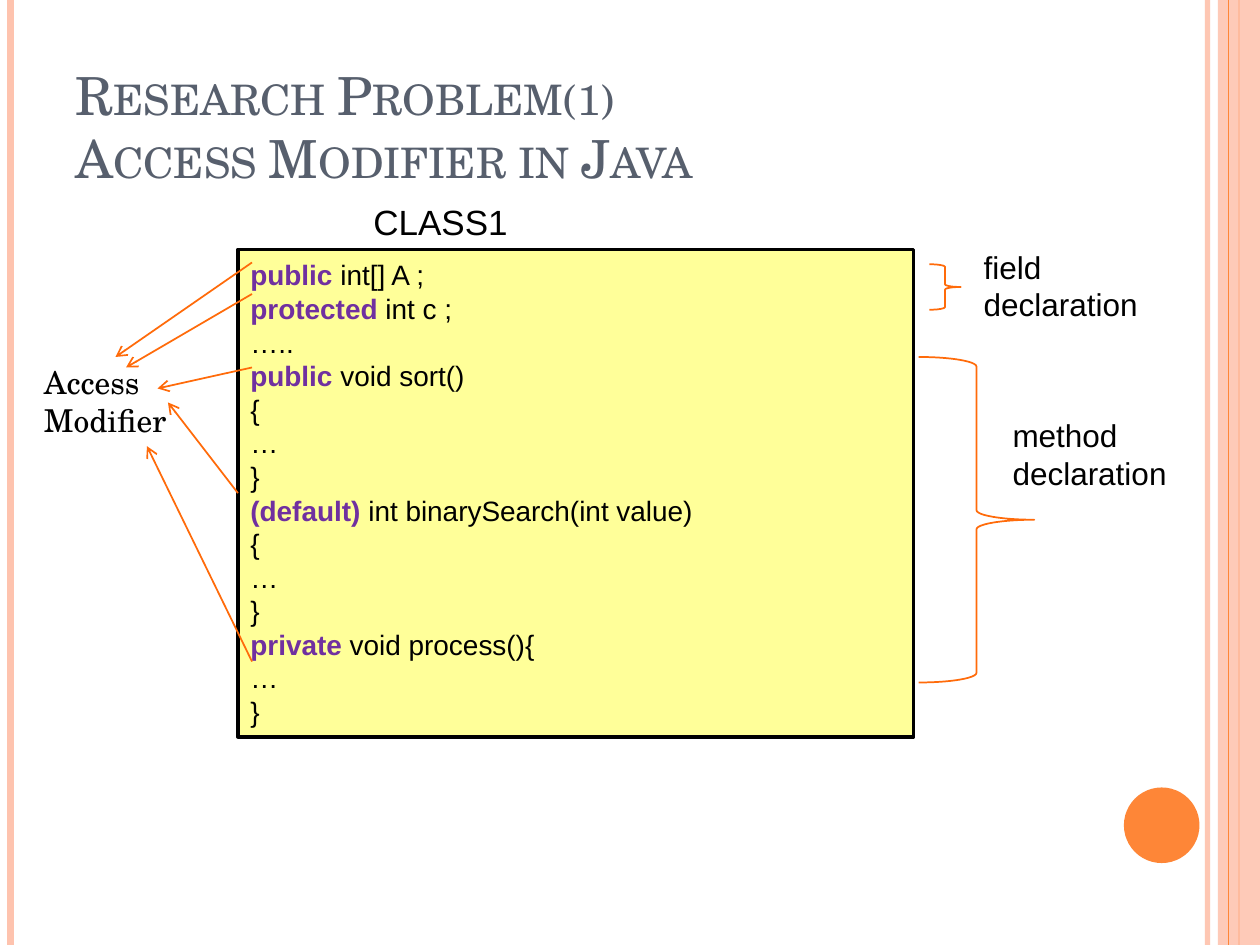
from dataclasses import dataclass

from lxml import etree
from pptx import Presentation
from pptx.dml.color import RGBColor
from pptx.enum.shapes import MSO_CONNECTOR, MSO_SHAPE
from pptx.enum.text import MSO_ANCHOR, PP_ALIGN
from pptx.oxml.ns import qn
from pptx.util import Pt

STRAIGHT = MSO_CONNECTOR.STRAIGHT
RECTANGLE, OVAL, BRACE = MSO_SHAPE.RECTANGLE, MSO_SHAPE.OVAL, MSO_SHAPE.RIGHT_BRACE
TOP, MIDDLE, BOTTOM = MSO_ANCHOR.TOP, MSO_ANCHOR.MIDDLE, MSO_ANCHOR.BOTTOM
LEFT, CENTER = PP_ALIGN.LEFT, PP_ALIGN.CENTER
LEFT_SIDE = 1
WIDTH, HEIGHT = 720, 540


@dataclass(frozen=True)
class Theme:
    serif: str = "TeX Gyre Schola"
    sans: str = "Arial"
    title: str = "575F6D"
    text: str = "000000"
    keyword: str = "7030A0"
    code_fill: str = "FFFF99"
    pale: str = "FEC3AE"
    orange: str = "FE8637"
    mark: str = "FF6B0A"
    title_size: int = 30
    heading_size: int = 20
    label_size: int = 18
    code_size: int = 16


THEME = Theme()

# Each code line is a keyword and the rest of the line
CODE = [
    ("public ", "int[] A ;"),
    ("protected ", "int c ;"),
    ("", "….."),
    ("public", " void sort()"),
    ("", "{"),
    ("", "…"),
    ("", "}"),
    ("(default) ", "int binarySearch(int value)"),
    ("", "{"),
    ("", "…"),
    ("", "}"),
    ("private", " void process(){"),
    ("", "…"),
    ("", "}"),
]


def color(value):
    return RGBColor.from_string(value)


def set_alpha(element, percent):
    """Make the first solid colour below the element partly transparent."""
    solid = next(element.iter(qn("a:srgbClr")))
    etree.SubElement(solid, qn("a:alpha")).set("val", str(percent * 1000))


def add_line(slide, start, end, line_color, width, arrow=False):
    line = slide.shapes.add_connector(STRAIGHT, *map(Pt, (*start, *end)))
    line.line.color.rgb = color(line_color)
    line.line.width = Pt(width)
    if arrow:
        outline = line._element.spPr.find(qn("a:ln"))
        etree.SubElement(outline, qn("a:tailEnd")).set("type", "arrow")
    etree.SubElement(line._element.spPr, qn("a:effectLst"))
    return line


def add_shape(slide, kind, box, fill=None, line_color=None, width=1):
    shape = slide.shapes.add_shape(kind, *map(Pt, box))
    shape.shadow.inherit = False
    if fill:
        shape.fill.solid()
        shape.fill.fore_color.rgb = color(fill)
    else:
        shape.fill.background()
    if line_color:
        shape.line.color.rgb = color(line_color)
        shape.line.width = Pt(width)
    else:
        shape.line.fill.background()
    return shape


def write_text(shape, lines, *, size, font=THEME.sans, text_color=THEME.text,
               anchor=TOP, align=LEFT, small_caps=False):
    """Write lines, each a (bold keyword, plain text) pair."""
    frame = shape.text_frame
    frame.word_wrap = True
    frame.vertical_anchor = anchor
    for index, (keyword, plain) in enumerate(lines):
        paragraph = frame.paragraphs[0] if index == 0 else frame.add_paragraph()
        paragraph.alignment = align
        for content, bold, shade in ((keyword, True, THEME.keyword),
                                     (plain, False, text_color)):
            if not content:
                continue
            run = paragraph.add_run()
            run.text = content
            run.font.name, run.font.size, run.font.bold = font, Pt(size), bold
            run.font.color.rgb = color(shade)
            if small_caps:
                run.font._element.set("cap", "small")


def add_label(slide, box, text, **text_format):
    label = slide.shapes.add_textbox(*map(Pt, box))
    write_text(label, [("", text)], **text_format)


def add_frame(slide, width, height):
    """Vertical stripes at both edges and the disc at lower right."""
    def stripe(x, line_color, line_width):
        return add_line(slide, (x, 0), (x, height), line_color, line_width)

    right_rule = stripe(width - 30, THEME.pale, 3)
    set_alpha(right_rule._element, 93)
    stripe(6, THEME.pale, 4.5)
    stripe(width - 12, THEME.orange, 1.5)
    band = add_shape(slide, RECTANGLE, (width - 24, 0, 24, height), THEME.pale)
    set_alpha(band._element.spPr, 87)
    stripe(width - 18, THEME.orange, 0.75)
    add_shape(slide, OVAL, (width - 77.75, height - 90, 43.2, 43.2), THEME.orange)


def add_title(slide, box):
    title = slide.shapes.add_textbox(*map(Pt, box))
    lines = [("", "Research Problem(1)"), ("", "Access Modifier in Java")]
    write_text(title, lines, size=THEME.title_size, font=THEME.serif,
               text_color=THEME.title, anchor=BOTTOM, small_caps=True)


def add_class_box(slide, box):
    """Code listing with the class name above it."""
    left, top, width, _ = box
    code = add_shape(slide, RECTANGLE, box, THEME.code_fill, THEME.text, 2)
    write_text(code, CODE, size=THEME.code_size, anchor=MIDDLE)
    add_label(slide, (left, top - 31.5, width * 0.6, 31.5), "CLASS1",
              size=THEME.heading_size, anchor=MIDDLE, align=CENTER)
    return code


def add_modifiers(slide, box, code):
    """Label at the left and arrows to it from the keywords."""
    add_label(slide, box, "Access Modifier", size=THEME.label_size, font=THEME.serif)
    keyword_x = 144
    arrows = [(150, (66, 204)), (168, (72, 210)), (210, (90, 222)),
              (None, (96, 230)), (378, (84, 255))]
    for y, end in arrows:
        # An arrow without a height starts at the middle of the box side
        start = (keyword_x, y or 0)
        arrow = add_line(slide, start, end, THEME.mark, 1, arrow=True)
        if y is None:
            arrow.begin_connect(code, LEFT_SIDE)


def add_declaration(slide, brace_box, label_box, text):
    add_shape(slide, BRACE, brace_box, line_color=THEME.mark)
    add_label(slide, label_box, text, size=THEME.label_size)


def main():
    presentation = Presentation()
    presentation.slide_width, presentation.slide_height = Pt(WIDTH), Pt(HEIGHT)
    slide = presentation.slides.add_slide(presentation.slide_layouts[6])

    add_frame(slide, WIDTH, HEIGHT)
    add_title(slide, (36, 21.6, 588, 90))
    code = add_class_box(slide, (136, 142.5, 386, 278.6))
    add_modifiers(slide, (18, 204, 96, 51), code)
    add_declaration(slide, (531, 151, 18, 26), (555, 138, 132, 51), "field declaration")
    add_declaration(slide, (525, 204, 66, 186), (571.5, 234, 132, 51), "method declaration")

    presentation.save("out.pptx")


if __name__ == "__main__":
    main()
